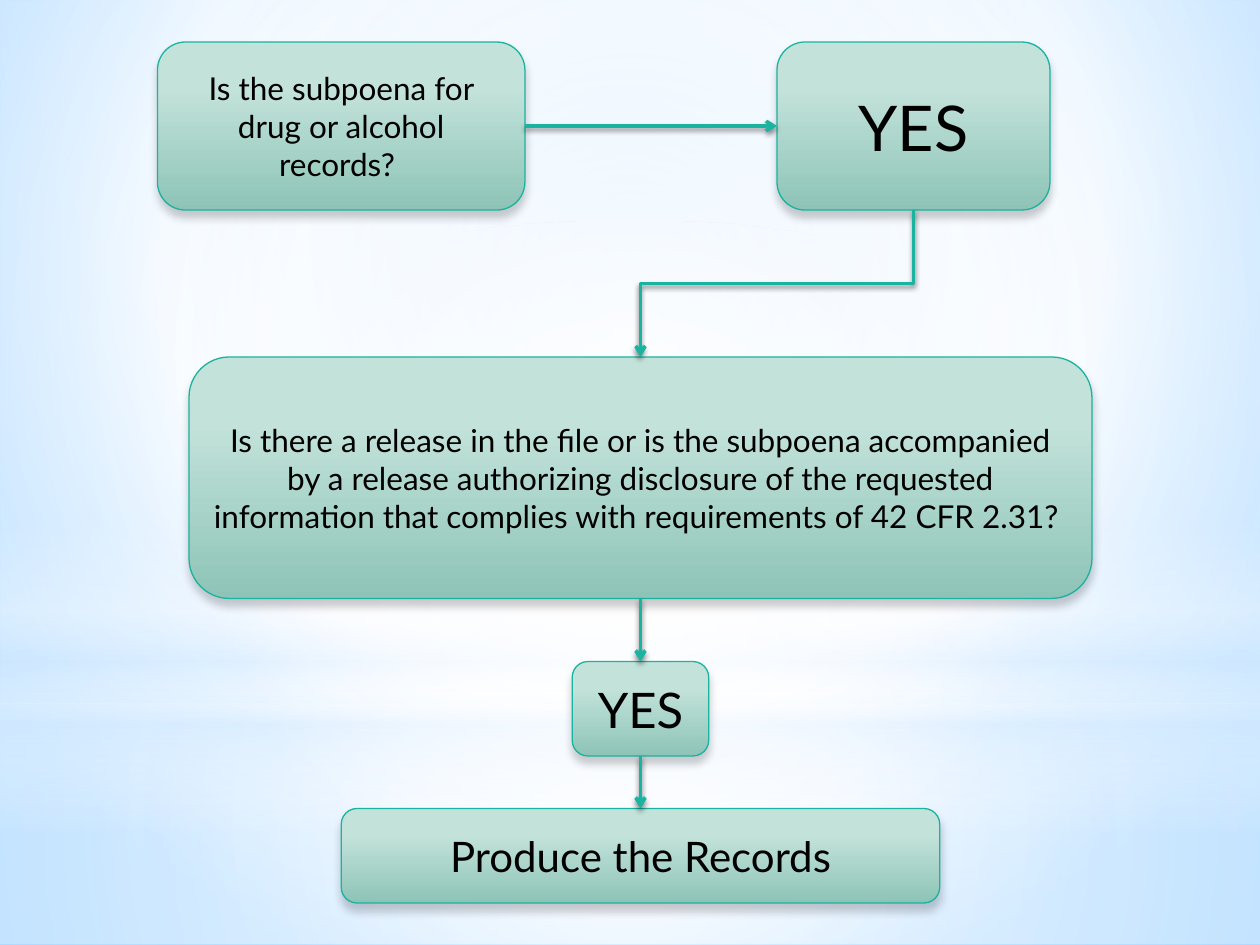
from pptx import Presentation
from pptx.dml.color import RGBColor
from pptx.enum import shapes, text
from pptx.oxml import parse_xml
from pptx.oxml.ns import nsdecls, qn
from pptx.util import Pt

THEME = {
    "font": "Lato", "body": 18, "action": 24, "answer": 28, "big_answer": 36,
    "ink": RGBColor(0x00, 0x00, 0x00), "accent": RGBColor(0x1A, 0xB3, 0x9F),
    "box": [(28, "C2E2DA", 100), (100, "8EC4B7", 100)],
    "sky": [(0, "C2E3FF", 100), (60, "FFFFFF", 100), (100, "79C1FF", 100)],
    "floor": [(0, "FFFFFF", 91), (37, "FFFFFF", 76), (100, "D6ECFF", 79)],
    "wall": [(0, "FFFFFF", 89), (48, "FFFFFF", 62), (100, "D6ECFF", 79)],
    "horizon": [(0, "FFFFFF", 0), (29, "FFFFFF", 30), (45, "D6ECFF", 40),
                (55, "FFFFFF", 26), (65, "D6ECFF", 60), (100, "FFFFFF", 0)],
    "glow": [(0, "FFFFFF", 100), (56, "FFFFFF", 0)],
}


def set_gradient(owner, fill, stops, center=None):
    fill.gradient()
    old = owner.element.find(f".//{qn('a:gradFill')}")
    gs = "".join(
        f'<a:gs pos="{pos * 1000}"><a:srgbClr val="{color}">'
        f'<a:alpha val="{alpha * 1000}"/></a:srgbClr></a:gs>'
        for pos, color, alpha in stops)
    if center:
        l, t, r, b = (v * 1000 for v in center)
        shade = (f'<a:path path="circle"><a:fillToRect l="{l}" t="{t}" '
                 f'r="{r}" b="{b}"/></a:path>')
    else:
        shade = '<a:lin ang="5400000" scaled="0"/>'
    new = parse_xml(f'<a:gradFill {nsdecls("a")} rotWithShape="1">'
                    f'<a:gsLst>{gs}</a:gsLst>{shade}</a:gradFill>')
    old.getparent().replace(old, new)


def shadow(alpha, blur, dist):
    return parse_xml(
        f'<a:outerShdw {nsdecls("a")} blurRad="{Pt(blur)}" dist="{Pt(dist)}" '
        f'dir="5400000" rotWithShape="0"><a:srgbClr val="000000">'
        f'<a:alpha val="{alpha * 1000}"/></a:srgbClr></a:outerShdw>')


prs = Presentation()
prs.slide_width, prs.slide_height = Pt(720), Pt(540)
s = prs.slides.add_slide(prs.slide_layouts[6])
set_gradient(s, s.background.fill, THEME["sky"], (20, 10, 20, 60))

MIDDLE = (50, 50, 50, 50)
SHAPE = shapes.MSO_SHAPE
layers = [
    (SHAPE.RECTANGLE, 402, 138, "floor", MIDDLE),
    (SHAPE.RECTANGLE, 0, 402, "wall", MIDDLE),
    (SHAPE.RECTANGLE, 297, 180, "horizon", None),
    (SHAPE.OVAL, 126, 402, "glow", MIDDLE),
]
for kind, top, height, stops, center in layers:
    sp = s.shapes.add_shape(kind, 0, Pt(top), prs.slide_width, Pt(height))
    sp.shadow.inherit = False
    sp.line.fill.background()
    set_gradient(sp, sp.fill, THEME[stops], center)

steps = [
    ("subpoena", 90, 24, 210, 96, "body",
     "Is the subpoena for drug or alcohol records? "),
    ("subpoena_yes", 444, 24, 156, 96, "big_answer", "YES"),
    ("release", 108, 204, 516, 138, "body",
     "Is there a release in the file or is the subpoena accompanied by a "
     "release authorizing disclosure of the requested information that "
     "complies with requirements of 42 CFR 2.31? "),
    ("release_yes", 327, 378, 78, 54, "answer", "YES"),
    ("produce", 195, 462, 342, 54, "action", "Produce the Records"),
]
boxes = {}
for name, left, top, width, height, size, words in steps:
    sp = s.shapes.add_shape(SHAPE.FLOWCHART_ALTERNATE_PROCESS,
                            Pt(left), Pt(top), Pt(width), Pt(height))
    sp.line.color.rgb = THEME["accent"]
    sp.line.width = Pt(0.75)
    set_gradient(sp, sp.fill, THEME["box"])
    sp.shadow.inherit = False
    sp.element.spPr.find(qn("a:effectLst")).append(shadow(20, 5, 4))
    tf = sp.text_frame
    tf.word_wrap = True
    tf.vertical_anchor = text.MSO_ANCHOR.MIDDLE
    p = tf.paragraphs[0]
    p.text = words
    p.alignment = text.PP_ALIGN.CENTER
    p.font.name = THEME["font"]
    p.font.size = Pt(THEME[size])
    p.font.color.rgb = THEME["ink"]
    boxes[name] = sp

arrows = []
for start, start_side, end, end_side in [
    ("subpoena", 3, "subpoena_yes", 1),
    ("release", 2, "release_yes", 0),
    ("release_yes", 2, "produce", 0),
]:
    arrow = s.shapes.add_connector(shapes.MSO_CONNECTOR.STRAIGHT, 0, 0, 0, 0)
    arrow.begin_connect(boxes[start], start_side)
    arrow.end_connect(boxes[end], end_side)
    arrows.append(arrow)

elbow = s.shapes.add_connector(shapes.MSO_CONNECTOR.ELBOW,
                               Pt(402), Pt(84), Pt(486), Pt(240))
elbow.element.spPr.find(qn("a:xfrm")).set("rot", "5400000")
arrows.append(elbow)

for arrow in arrows:
    arrow.line.color.rgb = THEME["accent"]
    arrow.line.width = Pt(2)
    spPr = arrow.element.spPr
    spPr.find(qn("a:ln")).append(
        parse_xml(f'<a:tailEnd {nsdecls("a")} type="arrow"/>'))
    effects = parse_xml(f'<a:effectLst {nsdecls("a")}/>')
    effects.append(shadow(45, 3.1, 1.8))
    spPr.append(effects)

prs.save("out.pptx")
